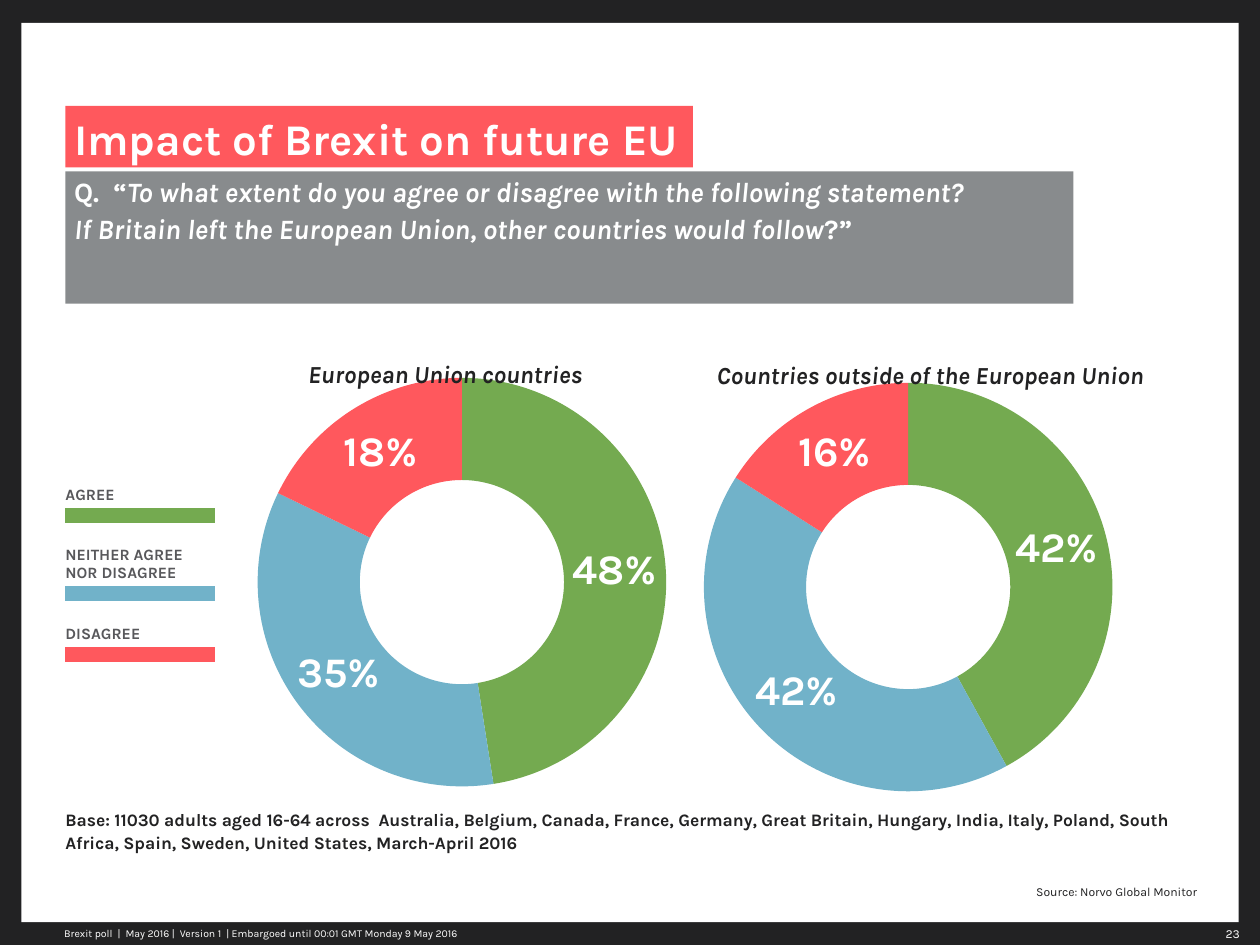
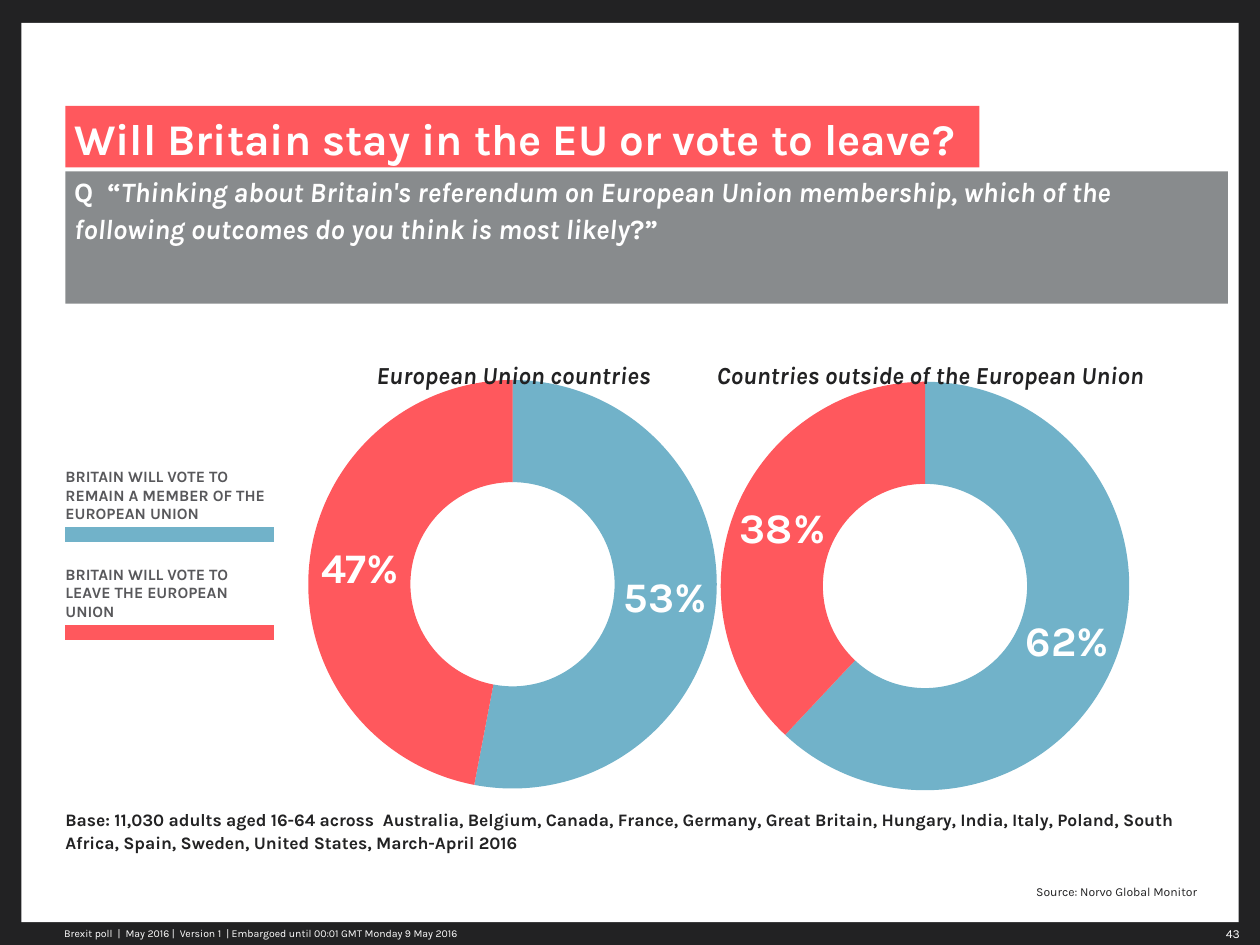
from lxml.etree import SubElement
from pptx import Presentation
from pptx.chart.data import CategoryChartData
from pptx.dml.color import RGBColor
from pptx.enum.chart import XL_CHART_TYPE
from pptx.enum.shapes import MSO_SHAPE
from pptx.enum.text import MSO_ANCHOR, PP_ALIGN
from pptx.oxml import parse_xml
from pptx.oxml.ns import nsdecls, qn
from pptx.util import Pt

INK = RGBColor(0x22, 0x22, 0x23)
WHITE = RGBColor(0xFF, 0xFF, 0xFF)
RED = RGBColor(0xFF, 0x58, 0x5D)
GREEN = RGBColor(0x74, 0xAA, 0x50)
BLUE = RGBColor(0x71, 0xB2, 0xC9)
GREY = RGBColor(0x88, 0x8B, 0x8D)
LABEL = RGBColor(0x58, 0x58, 0x5B)

FONT = "Karla"
LEFT = 37.4
RIGHT = 684
SWATCH_H = 8.64
CHART_W, CHART_H = 279.4, 253.4
RING = 233.5
NO_STYLE = "{2D5ABB26-0587-4C30-8999-92F81FD0307C}"
FOOTER = "Brexit poll  |  May 2016 |  Version 1  | Embargoed until 00:01 GMT Monday 9 May 2016"
SOURCE = "Source: Norvo Global Monitor"
BASE = ("Base: {} adults aged 16-64 across  Australia, Belgium, Canada, France, Germany, "
        "Great Britain, Hungary, India, Italy, Poland, South Africa, Spain, Sweden, "
        "United States, March-April 2016")


def add_run(p, text, size=10, color=INK, bold=False, italic=False):
    r = p.add_run()
    r.text = text
    r.font.name = FONT
    r.font.size = Pt(size)
    r.font.color.rgb = color
    r.font.bold = bold
    r.font.italic = italic
    return r


def set_frame(tf, margins=(0, 0, 0, 0), anchor=MSO_ANCHOR.TOP, wrap=True):
    tf.margin_left, tf.margin_top, tf.margin_right, tf.margin_bottom = map(Pt, margins)
    tf.vertical_anchor = anchor
    tf.word_wrap = wrap


class Deck:
    def __init__(self):
        self.prs = Presentation()
        self.prs.slide_width, self.prs.slide_height = Pt(720), Pt(540)
        self.s = None

    def new_slide(self, number, base):
        self.s = self.prs.slides.add_slide(self.prs.slide_layouts[6])
        fill = self.s.background.fill
        fill.solid()
        fill.fore_color.rgb = INK
        self.rect(12.3, 13, 695.5, 514, WHITE)
        self.text(str(number), 674.6, 526.3, 38.9, 14.4, margins=(5, 2, 5, 2),
                  align=PP_ALIGN.RIGHT, spacing=1.1, size=7, color=WHITE)
        self.text(FOOTER, 36.7, 527, 330, 13, anchor=MSO_ANCHOR.MIDDLE, size=6, color=WHITE)
        self.text(SOURCE, 486, 500.4, RIGHT - 486, 13, anchor=MSO_ANCHOR.BOTTOM,
                  align=PP_ALIGN.RIGHT, spacing=1.1, size=7)
        self.text(BASE.format(base), LEFT, 474.5, RIGHT - LEFT, 13,
                  anchor=MSO_ANCHOR.BOTTOM, spacing=1.1, bold=True)

    def rect(self, x, y, w, h, color):
        sp = self.s.shapes.add_shape(MSO_SHAPE.RECTANGLE, Pt(x), Pt(y), Pt(w), Pt(h))
        sp.shadow.inherit = False
        sp.fill.solid()
        sp.fill.fore_color.rgb = color
        sp.line.fill.background()
        return sp

    def text(self, text, x, y, w, h, margins=(0, 0, 0, 0), anchor=MSO_ANCHOR.TOP,
             align=PP_ALIGN.LEFT, spacing=1.0, **style):
        tf = self.s.shapes.add_textbox(Pt(x), Pt(y), Pt(w), Pt(h)).text_frame
        set_frame(tf, margins, anchor)
        p = tf.paragraphs[0]
        p.alignment = align
        p.line_spacing = spacing
        add_run(p, text, **style)

    def title(self, text, w):
        tf = self.rect(LEFT, 60.5, w, 35.2, RED).text_frame
        set_frame(tf, (5, 2, 0, 2), MSO_ANCHOR.BOTTOM)
        p = tf.paragraphs[0]
        p.alignment = PP_ALIGN.LEFT
        add_run(p, text, size=25, color=WHITE, bold=True)

    def question(self, lead, lines, w):
        tf = self.rect(LEFT, 98, w, 75.6, GREY).text_frame
        set_frame(tf, (5, 0, 5, 0))
        style = dict(size=16, color=WHITE, bold=True)
        for i, line in enumerate(lines):
            p = tf.add_paragraph() if i else tf.paragraphs[0]
            p.alignment = PP_ALIGN.LEFT
            p.line_spacing = 1.1
            if i == 0:
                add_run(p, lead, **style)
            add_run(p, line, italic=True, **style)
        add_run(p, "?”", **style)

    def doughnut(self, x, y, values, colors):
        data = CategoryChartData(number_format="0%")
        data.categories = [str(i + 1) for i in range(len(values))]
        data.add_series("Series 1", values)
        chart = self.s.shapes.add_chart(XL_CHART_TYPE.DOUGHNUT, Pt(x), Pt(y),
                                        Pt(CHART_W), Pt(CHART_H), data).chart
        chart.has_legend = False
        chart.has_title = False
        chart.font.name = FONT
        chart.font.size = Pt(18)
        chart.font.color.rgb = INK
        plot = chart.plots[0]
        plot.vary_by_categories = True
        for i, color in enumerate(colors):
            fmt = plot.series[0].points[i].format
            fmt.fill.solid()
            fmt.fill.fore_color.rgb = color
            fmt.line.fill.background()
        plot.has_data_labels = True
        labels = plot.data_labels
        labels.show_value = True
        labels.show_percentage = False
        labels.number_format = "0%"
        labels.number_format_is_linked = False
        labels.font.name = FONT
        labels.font.size = Pt(24)
        labels.font.bold = True
        labels.font.color.rgb = WHITE
        self.place_ring(chart)

    def place_ring(self, chart):
        area = chart._chartSpace.find(".//" + qn("c:plotArea"))
        for old in area.findall(qn("c:layout")):
            area.remove(old)
        w, h = RING / CHART_W, RING / CHART_H
        sizes = {"x": (1 - w) / 2, "y": (1 - h) / 2, "w": w, "h": h}
        modes = "".join(f'<c:{k}Mode val="edge"/>' for k in "xy")
        vals = "".join(f'<c:{k} val="{v:.4f}"/>' for k, v in sizes.items())
        area.insert(0, parse_xml(
            f'<c:layout {nsdecls("c")}><c:manualLayout><c:layoutTarget val="inner"/>'
            f'{modes}{vals}</c:manualLayout></c:layout>'))

    def chart_heading(self, text, x, y, w):
        self.text(text, x, y, w, 17.3, align=PP_ALIGN.CENTER, size=14, bold=True, italic=True)

    def legend(self, y, w, entries):
        heights = [h for _, label_h, _ in entries for h in (label_h, SWATCH_H, SWATCH_H)]
        table = self.s.shapes.add_table(len(heights), 1, Pt(LEFT), Pt(y),
                                        Pt(w), Pt(sum(heights))).table
        table.first_row = table.horz_banding = False
        table._tbl.tblPr.find(qn("a:tableStyleId")).text = NO_STYLE
        for i, h in enumerate(heights):
            text, _, color = entries[i // 3]
            table.rows[i].height = Pt(h)
            cell = table.cell(i, 0)
            cell.fill.background()
            cell.margin_left = cell.margin_right = cell.margin_top = cell.margin_bottom = 0
            p = cell.text_frame.paragraphs[0]
            if i % 3 == 0:
                cell.margin_top, cell.margin_bottom = Pt(3.6), Pt(2)
                cell.vertical_anchor = MSO_ANCHOR.BOTTOM
                add_run(p, text, size=9, color=LABEL, bold=True)
                continue
            SubElement(p._p, qn("a:endParaRPr"), sz="100")
            if i % 3 == 1:
                cell.fill.solid()
                cell.fill.fore_color.rgb = color


def main():
    d = Deck()
    eu, outside = "European Union countries", "Countries outside of the European Union"

    d.new_slide(23, "11030")
    d.title("Impact of Brexit on future EU", 358.6)
    d.question("Q.  “", [
        "To what extent do you agree or disagree with the following statement?",
        "If Britain left the European Union, other countries would follow"], 576)
    colors = [GREEN, BLUE, RED]
    d.doughnut(124.3, 206, [0.48, 0.35, 0.18], colors)
    d.doughnut(379.3, 208.8, [0.42, 0.42, 0.16], colors)
    d.chart_heading(eu, 98, 205.2, 313)
    d.chart_heading(outside, 379.5, 206, 304.5)
    d.legend(272.9, 85.5, [("AGREE", 17.3, GREEN),
                           ("NEITHER AGREE NOR DISAGREE", 27.6, BLUE),
                           ("DISAGREE", 17.3, RED)])

    d.new_slide(43, "11,030")
    d.title("Will Britain stay in the EU or vote to leave?", 522.3)
    d.question("Q  “", [
        "Thinking about Britain's referendum on European Union membership, which of the",
        "following outcomes do you think is most likely"], 664.3)
    colors = [BLUE, RED]
    d.doughnut(153.2, 207.2, [0.53, 0.47], colors)
    d.doughnut(388.9, 208.2, [0.62, 0.38], colors)
    d.chart_heading(eu, 137, 206, 313)
    d.chart_heading(outside, 379.5, 206, 304.5)
    d.legend(263, 119, [
        ("BRITAIN WILL VOTE TO REMAIN A MEMBER OF THE EUROPEAN UNION", 38.4, BLUE),
        ("BRITAIN WILL VOTE TO LEAVE THE EUROPEAN UNION", 38.4, RED)])

    d.prs.save("out.pptx")


if __name__ == "__main__":
    main()
